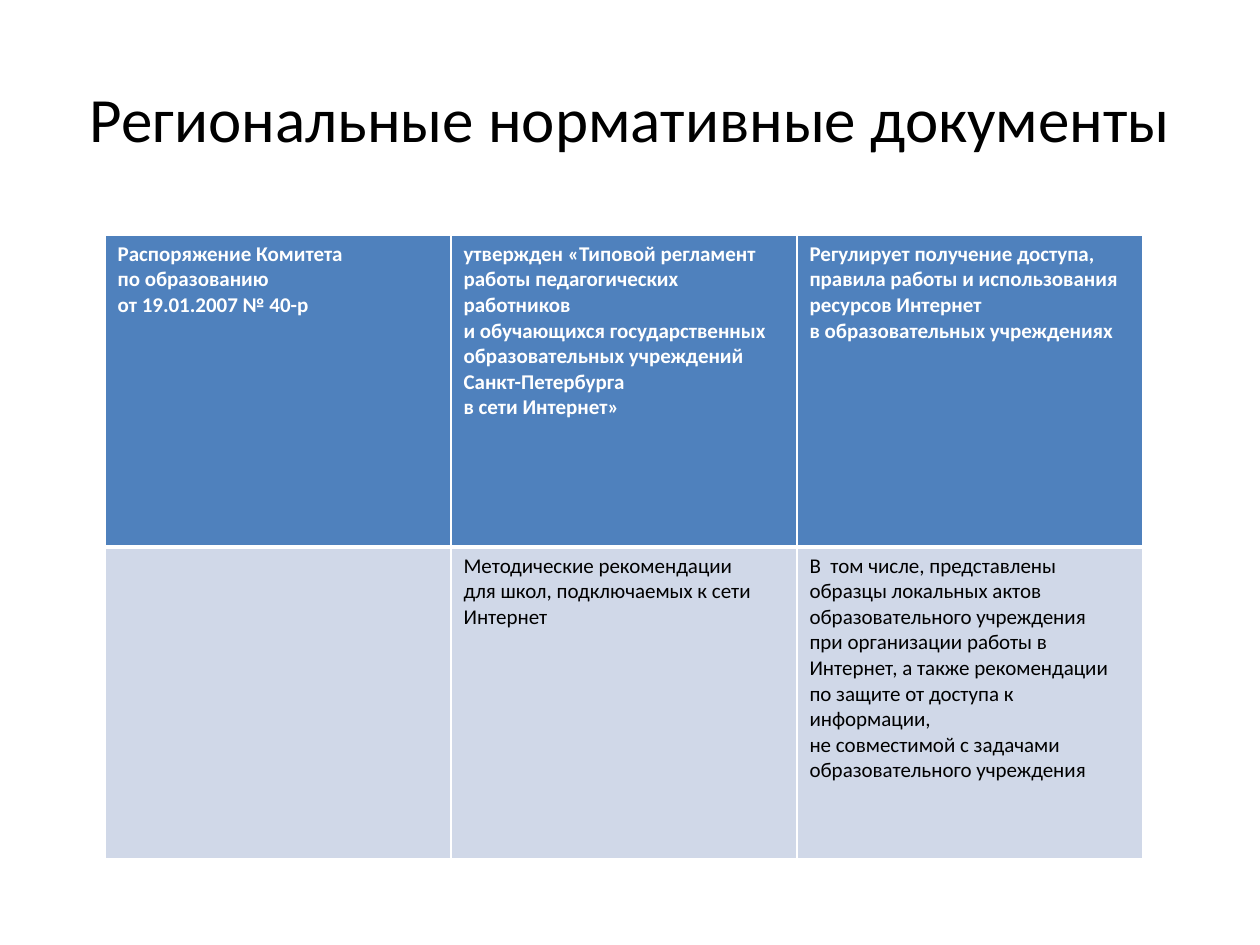
"""Build a slide with a title and a table of regional regulations."""
from lxml import etree
from pptx import Presentation
from pptx.dml.color import RGBColor
from pptx.enum import text
from pptx.oxml import ns
from pptx.util import Emu, Pt

SCALE = 914400 / 126


def px(n):
    return Emu(round(n * SCALE))


def hue(code):
    return RGBColor.from_string(code)


def write(frame, *lines, size=12, color="000000", bold=False, face="Calibri", align=None):
    for i, line in enumerate(lines):
        para = frame.add_paragraph() if i else frame.paragraphs[0]
        para.text = line
        para.alignment = align
        for run in para.runs:
            font = run.font
            font.name, font.size, font.bold = face, Pt(size), bold
            font.color.rgb = hue(color)


class Deck:
    face = "Calibri"
    white = "FFFFFF"
    black = "000000"
    head = "4F81BD"
    band = "D0D8E8"

    def __init__(self, wide, high):
        self.prs = Presentation()
        self.prs.slide_width, self.prs.slide_height = px(wide), px(high)
        self.slide = self.prs.slides.add_slide(self.prs.slide_layouts[5])

    def title(self, line, x, y, w, h):
        shape = self.slide.shapes.title
        shape.left, shape.top, shape.width, shape.height = map(px, (x, y, w, h))
        frame = shape.text_frame
        frame.word_wrap = True
        frame.vertical_anchor = text.MSO_ANCHOR.MIDDLE
        write(frame, line, size=36, color=self.black, face=self.face,
              align=text.PP_ALIGN.CENTER)

    def edge(self, cell, **sides):
        props = cell._tc.get_or_add_tcPr()
        for i, (side, width) in enumerate(sides.items()):
            line = etree.Element(ns.qn(f"a:ln{side}"), w=str(Pt(width)))
            fill = etree.SubElement(line, ns.qn("a:solidFill"))
            etree.SubElement(fill, ns.qn("a:srgbClr"), val=self.white)
            props.insert(i, line)

    def table(self, rows, x, y, w, h):
        count = len(rows[0])
        grid = self.slide.shapes.add_table(
            len(rows), count, px(x), px(y), px(w), px(h)).table
        for col in grid.columns:
            col.width = px(w // count)
        for r, row in enumerate(rows):
            grid.rows[r].height = px(h // len(rows))
            top = r == 0
            for c, lines in enumerate(row):
                cell = grid.cell(r, c)
                cell.fill.solid()
                cell.fill.fore_color.rgb = hue(self.head if top else self.band)
                self.edge(cell, L=1, R=1, T=1 if top else 3, B=3 if top else 1)
                write(cell.text_frame, *lines, face=self.face, bold=top,
                      color=self.white if top else self.black)

    def save(self):
        self.prs.save("out.pptx")


ROWS = [
    [
        ["Распоряжение Комитета", "по образованию \vот 19.01.2007 № 40-р"],
        ["утвержден «Типовой регламент работы педагогических работников",
         "и обучающихся государственных образовательных учреждений "
         "\vСанкт-Петербурга \vв сети Интернет»"],
        ["Регулирует получение доступа, правила работы и использования "
         "ресурсов Интернет \vв образовательных учреждениях"],
    ],
    [
        [],
        ["Методические рекомендации \vдля школ, подключаемых к сети Интернет"],
        ["В  том числе, представлены образцы локальных актов "
         "образовательного учреждения \vпри организации работы в Интернет, "
         "а также рекомендации по защите от доступа к информации, "
         "\vне совместимой с задачами образовательного учреждения"],
    ],
]


def main():
    deck = Deck(1260, 945)
    deck.title("Региональные нормативные документы", 63, 38, 1134, 158)
    deck.table(ROWS, 105, 235, 1038, 624)
    deck.save()


if __name__ == "__main__":
    main()
